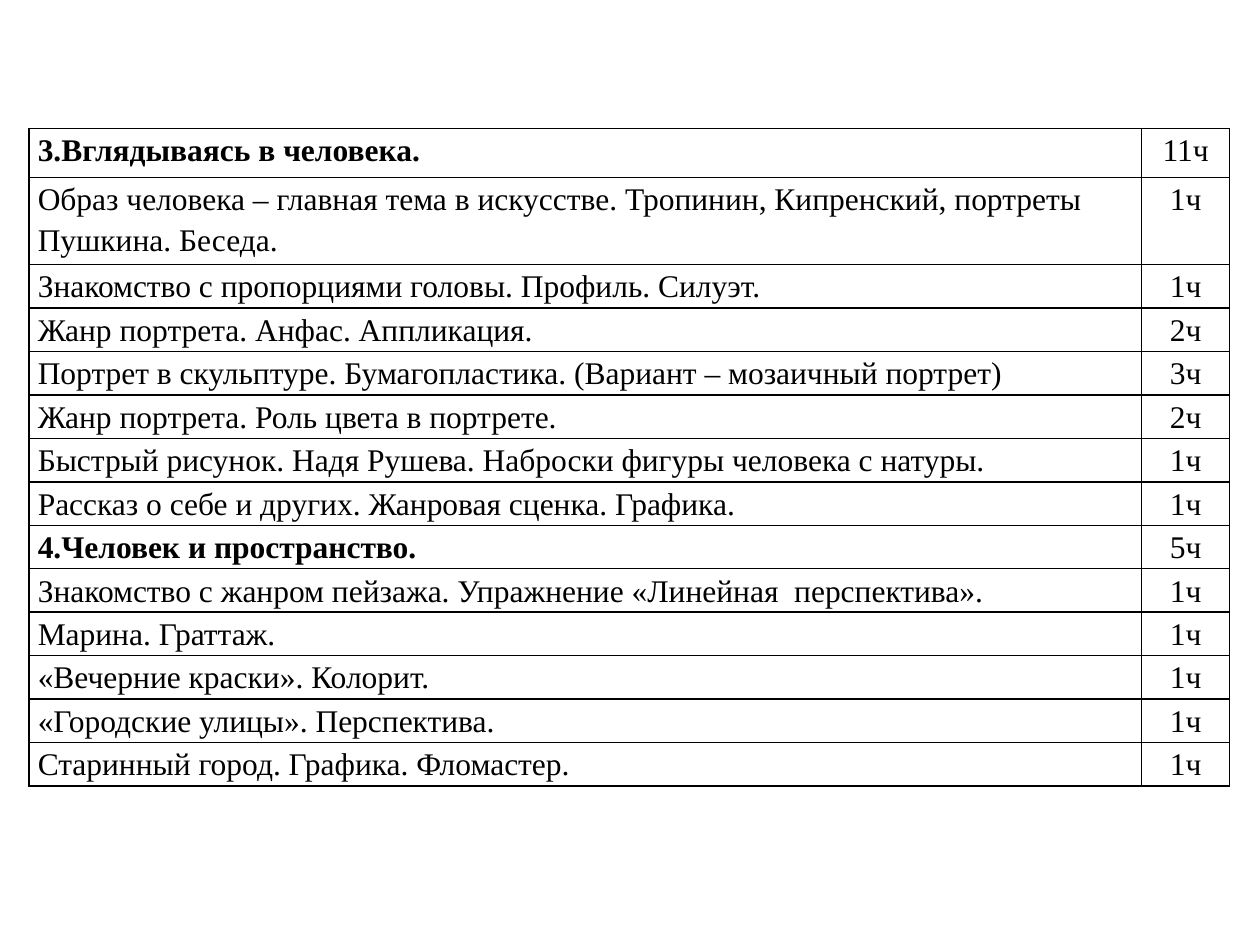
from lxml import etree
from pptx import Presentation
from pptx.dml.color import RGBColor
from pptx.enum.text import PP_ALIGN
from pptx.oxml.ns import qn
from pptx.util import Inches, Pt

LEFT, CENTER = PP_ALIGN.LEFT, PP_ALIGN.CENTER
COLORS = {"ink": "000000"}
BLANK_LAYOUT = 6
BORDERS = ("a:lnL", "a:lnR", "a:lnT", "a:lnB")

LESSONS = [
    ("3.Вглядываясь в человека.", "11ч"),
    ("Образ человека – главная тема в искусстве. Тропинин, Кипренский, "
     "портреты Пушкина. Беседа.", "1ч"),
    ("Знакомство с пропорциями головы. Профиль. Силуэт.", "1ч"),
    ("Жанр портрета. Анфас. Аппликация.", "2ч"),
    ("Портрет в скульптуре. Бумагопластика. (Вариант – мозаичный портрет)", "3ч"),
    ("Жанр портрета. Роль цвета в портрете.", "2ч"),
    ("Быстрый рисунок. Надя Рушева. Наброски фигуры человека с натуры.", "1ч"),
    ("Рассказ о себе и других. Жанровая сценка. Графика.", "1ч"),
    ("4.Человек и пространство.", "5ч"),
    ("Знакомство с жанром пейзажа. Упражнение «Линейная  перспектива».", "1ч"),
    ("Марина. Граттаж.", "1ч"),
    ("«Вечерние краски». Колорит.", "1ч"),
    ("«Городские улицы». Перспектива.", "1ч"),
    ("Старинный город. Графика. Фломастер.", "1ч"),
]
SECTION_ROWS = (0, 8)
TABLE_HEIGHT = 5.22
TOP_HEIGHTS = [0.39, 0.69]
LESSON_ROWS = len(LESSONS) - len(TOP_HEIGHTS)
LESSON_HEIGHT = (TABLE_HEIGHT - sum(TOP_HEIGHTS)) / LESSON_ROWS
ROW_HEIGHTS = TOP_HEIGHTS + [LESSON_HEIGHT] * LESSON_ROWS


class PlanSlide:
    """Holds the style and the current slide, and draws the lesson plan on it."""

    font_name = "Times New Roman"
    font_size = Pt(18)
    line_spacing = 1.15
    side_margin = Inches(0.07)
    border_width = Pt(1)

    def __init__(self, deck):
        self.page = deck.slides.add_slide(deck.slide_layouts[BLANK_LAYOUT])

    def table(self, left, top, widths, heights, rows, bold_rows):
        frame = self.page.shapes.add_table(
            len(rows), len(widths), Inches(left), Inches(top),
            Inches(sum(widths)), Inches(sum(heights)))
        table = frame.table
        table.first_row = table.horz_banding = False
        for column, width in zip(table.columns, widths):
            column.width = Inches(width)
        for index, (row, height) in enumerate(zip(table.rows, heights)):
            row.height = Inches(height)
            topic, hours = rows[index]
            self.cell(row.cells[0], topic, LEFT, index in bold_rows)
            self.cell(row.cells[1], hours, CENTER, False)

    def cell(self, cell, text, alignment, bold):
        cell.margin_left = cell.margin_right = self.side_margin
        cell.margin_top = cell.margin_bottom = 0
        self.borders(cell)
        cell.fill.background()
        cell.text = text
        para = cell.text_frame.paragraphs[0]
        para.alignment = alignment
        para.line_spacing = self.line_spacing
        para.font.name = self.font_name
        para.font.size = self.font_size
        para.font.bold = bold
        para.font.color.rgb = RGBColor.from_string(COLORS["ink"])

    def borders(self, cell):
        properties = cell._tc.get_or_add_tcPr()
        for side in BORDERS:
            line = etree.SubElement(properties, qn(side), w=str(self.border_width))
            fill = etree.SubElement(line, qn("a:solidFill"))
            etree.SubElement(fill, qn("a:srgbClr"), val=COLORS["ink"])


def main():
    deck = Presentation()
    deck.slide_width, deck.slide_height = Inches(10), Inches(7.5)
    plan = PlanSlide(deck)
    plan.table(0.23, 1.02, [8.83, 0.7], ROW_HEIGHTS, LESSONS, SECTION_ROWS)
    deck.save("out.pptx")


if __name__ == "__main__":
    main()
